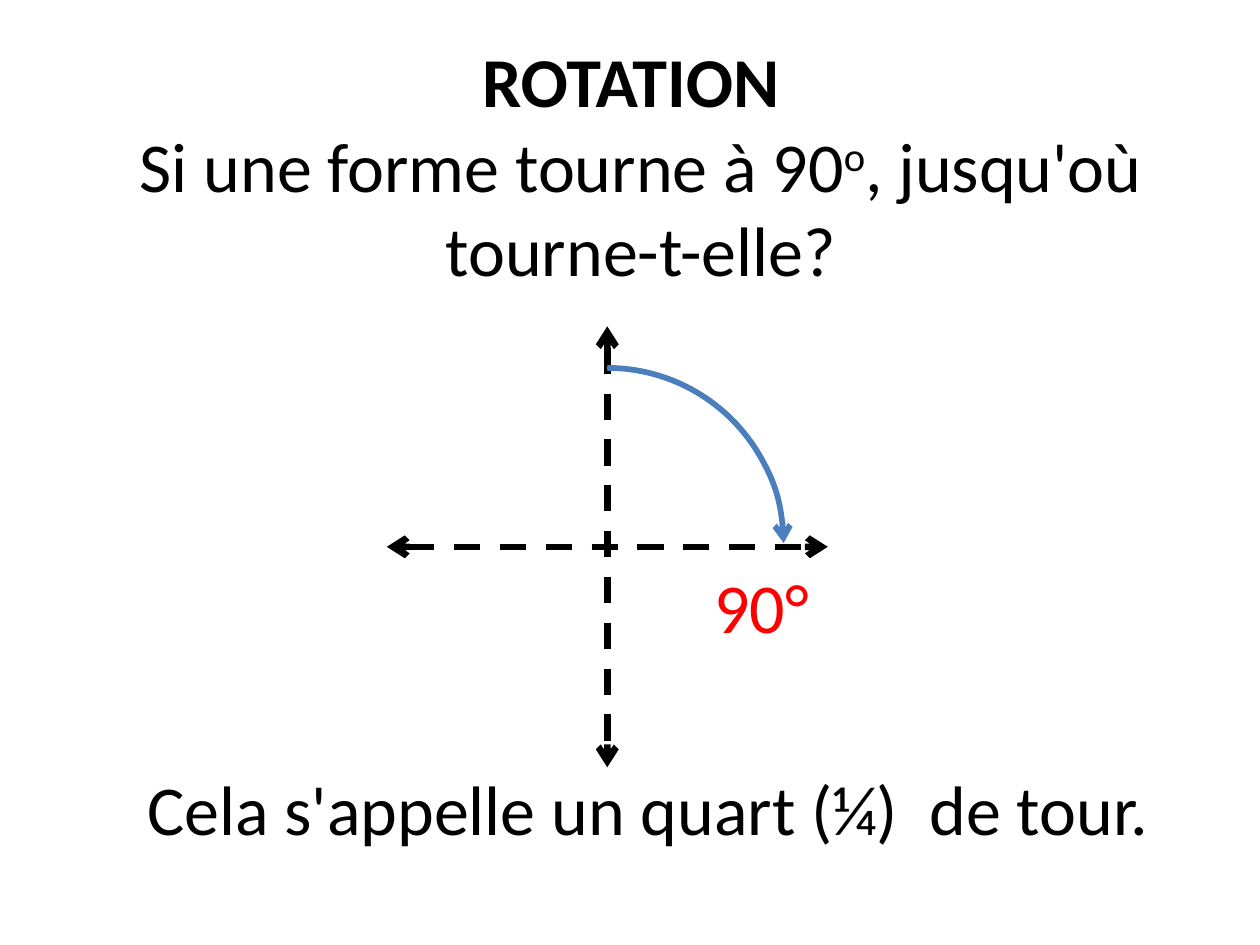
from lxml.etree import SubElement
from pptx import Presentation
from pptx.dml.color import RGBColor
from pptx.enum.dml import MSO_LINE
from pptx.enum.shapes import MSO_CONNECTOR, MSO_SHAPE
from pptx.enum.text import MSO_AUTO_SIZE, PP_ALIGN
from pptx.oxml.ns import qn
from pptx.util import Inches, Pt

BLACK = RGBColor(0x00, 0x00, 0x00)
RED = RGBColor(0xFF, 0x00, 0x00)
BLUE = RGBColor(0x4B, 0x7E, 0xBC)


def add_run(p, text, font="Calibri", size=40, color=BLACK, bold=False, baseline=0):
    r = p.add_run()
    r.text = text
    r.font.name = font
    r.font.size = Pt(size)
    r.font.bold = bold
    r.font.color.rgb = color
    if baseline:
        r.font._element.set("baseline", str(baseline * 1000))


class SlideBuilder:
    def __init__(self, slide):
        self.shapes = slide.shapes

    def text(self, x, y, w, h, *runs, align=PP_ALIGN.LEFT, wrap=True, **style):
        box = self.shapes.add_textbox(Inches(x), Inches(y), Inches(w), Inches(h))
        tf = box.text_frame
        tf.word_wrap = wrap
        tf.auto_size = MSO_AUTO_SIZE.SHAPE_TO_FIT_TEXT
        p = tf.paragraphs[0]
        p.alignment = align
        for text, extra in runs:
            add_run(p, text, **style, **extra)

    def stroke(self, sp, color, width, ends):
        sp.line.color.rgb = color
        sp.line.width = Pt(width)
        ln = sp.line._get_or_add_ln()
        for end in ends:
            SubElement(ln, qn(f"a:{end}"), type="arrow")

    def axis(self, x1, y1, x2, y2):
        line = self.shapes.add_connector(
            MSO_CONNECTOR.STRAIGHT, Inches(x1), Inches(y1), Inches(x2), Inches(y2))
        line.line.dash_style = MSO_LINE.DASH
        self.stroke(line, BLACK, 3.75, ("headEnd", "tailEnd"))
        SubElement(line._element.spPr, qn("a:effectLst"))

    def arc(self, x, y, size, start, end):
        sp = self.shapes.add_shape(
            MSO_SHAPE.ARC, Inches(x), Inches(y), Inches(size), Inches(size))
        sp.adjustments[0] = start
        sp.adjustments[1] = end
        sp.fill.background()
        self.stroke(sp, BLUE, 3.25, ("tailEnd",))
        sp.shadow.inherit = False


def main():
    prs = Presentation()
    prs.slide_width = Inches(10)
    prs.slide_height = Inches(7.5)
    s = SlideBuilder(prs.slides.add_slide(prs.slide_layouts[6]))

    cx, cy, reach, radius = 4.82, 4.34, 1.75, 1.4
    s.text(0.17, 0.25, 9.67, 0.77, ("ROTATION", {}), align=PP_ALIGN.CENTER, bold=True)
    s.axis(cx, cy - reach, cx, cy + reach)
    s.axis(cx - reach, cy, cx + reach, cy)
    s.arc(cx - radius, cy - radius - 0.02, 2 * radius, 162, 215.76)
    s.text(0.84, 0.92, 8.49, 1.45,
           ("Si une forme tourne à 90", {}),
           ("o", {"baseline": 30}),
           (", jusqu'où tourne-t-elle?", {}),
           align=PP_ALIGN.CENTER)
    s.text(1.07, 6.03, 8.32, 0.77, ("Cela s'appelle un quart (¼)  de tour.", {}))
    s.text(5.57, 4.42, 0.99, 0.77, ("90°", {}), wrap=False, color=RED)

    prs.save("out.pptx")


if __name__ == "__main__":
    main()
